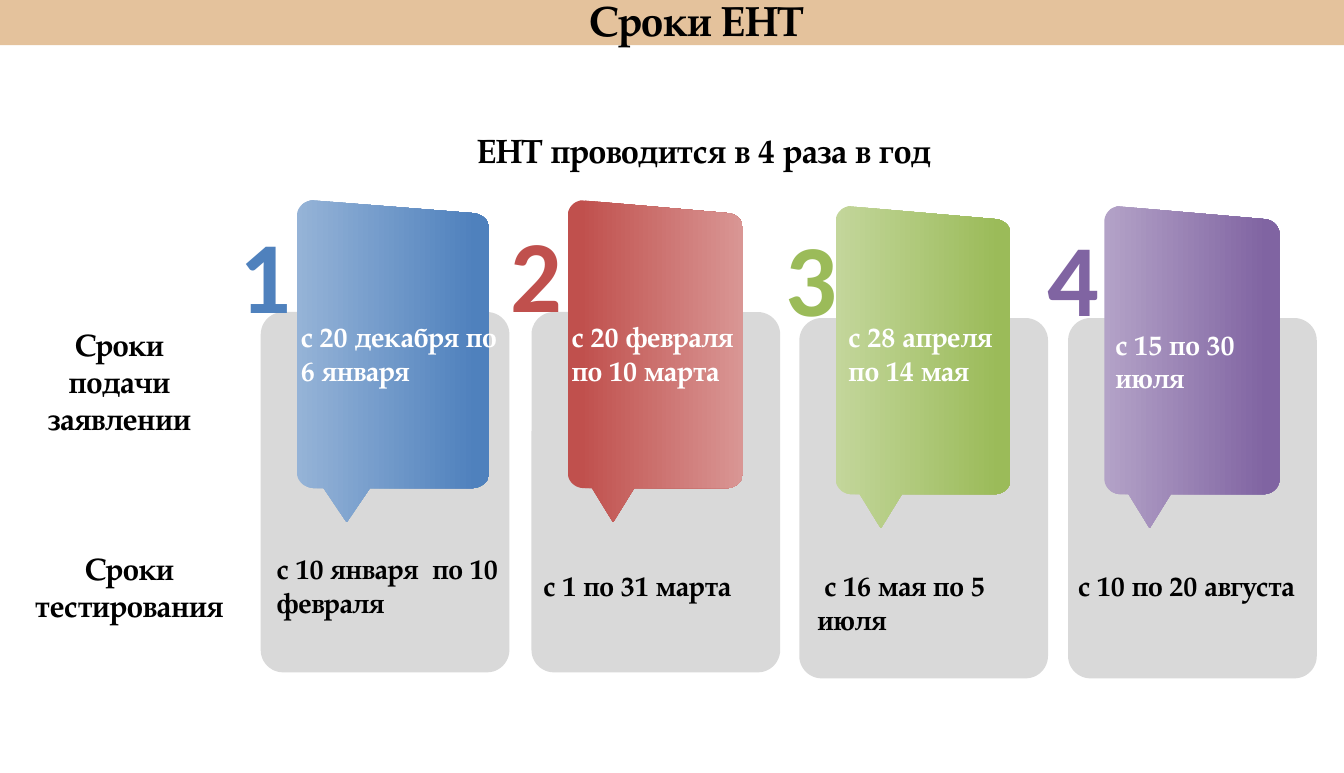
import pptx
import pptx.dml.color
import pptx.enum.shapes
import pptx.enum.text
import pptx.util

Inches = pptx.util.Inches
LEFT = pptx.enum.text.PP_ALIGN.LEFT
CENTER = pptx.enum.text.PP_ALIGN.CENTER
SHAPES = pptx.enum.shapes.MSO_SHAPE

PANEL_WIDTH = 1.74
PANEL_OUTLINE = [
    [(0.13, 0)], [(1.62, 0.13)], [(1.64, 0.14)],
    [(1.70, 0.16), (1.74, 0.22), (1.74, 0.28)],
    [(1.74, 2.71)],
    [(1.74, 2.79), (1.67, 2.86), (1.58, 2.86)],
    [(0.66, 2.86)], [(0.45, 3.2)], [(0.24, 2.86)], [(0.16, 2.86)],
    [(0.07, 2.86), (0, 2.79), (0, 2.71)],
    [(0, 0.15)],
    [(0, 0.09), (0.04, 0.03), (0.10, 0.01)],
]


def rgb(value):
    return pptx.dml.color.RGBColor.from_string(value)


def curve(start, first, second, end, steps=10):
    for step in range(1, steps + 1):
        t = step / steps
        yield tuple(
            (1 - t) ** 3 * a + 3 * (1 - t) ** 2 * t * b + 3 * (1 - t) * t ** 2 * c + t ** 3 * d
            for a, b, c, d in zip(start, first, second, end)
        )


def panel_points():
    points = []
    for segment in PANEL_OUTLINE:
        points.extend(segment if len(segment) == 1 else curve(points[-1], *segment))
    return points


class Slide:
    serif = "TeX Gyre Pagella"
    digit_font = "Calibri"
    black = "000000"
    white = "FFFFFF"
    card_gray = "D9D9D9"
    band_tan = "E4C29C"

    def __init__(self, deck):
        self.slide = deck.slides.add_slide(deck.slide_layouts[5])
        self.shapes = self.slide.shapes

    def fill_text(self, frame, text, size, color, font, align, wrap):
        frame.word_wrap = wrap
        frame.auto_size = pptx.enum.text.MSO_AUTO_SIZE.NONE
        frame.vertical_anchor = pptx.enum.text.MSO_ANCHOR.TOP
        for index, line in enumerate(text.split("\n")):
            paragraph = frame.add_paragraph() if index else frame.paragraphs[0]
            paragraph.alignment = align
            run = paragraph.add_run()
            run.text = line
            run.font.name = font
            run.font.size = pptx.util.Pt(size)
            run.font.bold = True
            run.font.color.rgb = rgb(color)

    def text(self, box, text, size=20, color=black, font=serif, align=LEFT, wrap=True):
        label = self.shapes.add_textbox(*map(Inches, box))
        self.fill_text(label.text_frame, text, size, color, font, align, wrap)

    def title(self, box, text):
        heading = self.shapes.title
        heading.left, heading.top, heading.width, heading.height = map(Inches, box)
        self.fill_text(heading.text_frame, text, 30, self.black, self.serif, LEFT, False)
        self.shapes._spTree.append(heading._element)

    def block(self, kind, box, color):
        block = self.shapes.add_shape(kind, *map(Inches, box))
        block.shadow.inherit = False
        block.fill.solid()
        block.fill.fore_color.rgb = rgb(color)
        block.line.fill.background()
        return block

    def card(self, left, top):
        card = self.block(SHAPES.ROUNDED_RECTANGLE, (left, top, 2.47, 3.58), self.card_gray)
        card.adjustments[0] = 0.09

    def panel(self, left, top, width, stops):
        stretch = width / PANEL_WIDTH
        points = [(Inches(left + x * stretch), Inches(top + y)) for x, y in panel_points()]
        builder = self.shapes.build_freeform(*points[0], scale=1.0)
        builder.add_line_segments(points[1:], close=True)
        panel = builder.convert_to_shape()
        panel.shadow.inherit = False
        panel.line.fill.background()
        panel.fill.gradient()
        panel.fill.gradient_angle = 0
        for stop, (position, color) in zip(panel.fill.gradient_stops, stops):
            stop.position = position
            stop.color.rgb = rgb(color)


def main():
    deck = pptx.Presentation()
    deck.slide_width, deck.slide_height = Inches(13.35), Inches(7.68)
    schedule = Slide(deck)

    rounds = [
        (2.59, 3.1, 1.91, "4F81BD", [(0, "95B3D7"), (0.93, "4F81BD")], (2.28, 2.05),
         (2.89, 3.13, 2.16, 0.78), "с 20 декабря по 6 января",
         (2.65, 5.43, 2.41, 0.78), "с 10 января  по 10 февраля"),
        (5.28, 3.1, 1.74, "C0504D", [(0.07, "C0504D"), (1, "D99694")], (4.97, 2.04),
         (5.58, 3.13, 1.94, 0.78), "с 20 февраля\nпо 10 марта",
         (5.3, 5.6, 2.38, 0.44), "с 1 по 31 марта"),
        (7.94, 3.16, 1.74, "9BBB59", [(0, "C3D69B"), (0.93, "9BBB59")], (7.7, 2.08),
         (8.33, 3.13, 1.74, 0.78), "с 28 апреля по 14 мая",
         (8.02, 5.6, 2.36, 0.78), " с 16 мая по 5 июля"),
        (10.61, 3.16, 1.74, "8064A2", [(0, "B3A2C7"), (0.93, "8064A2")], (10.31, 2.08),
         (10.98, 3.2, 1.74, 0.78), "с 15 по 30 июля",
         (10.61, 5.6, 2.56, 0.44), "с 10 по 20 августа"),
    ]
    for number, (left, top, width, accent, stops, digit_at,
                 apply_box, apply_dates, test_box, test_dates) in enumerate(rounds, 1):
        schedule.card(left, top)
        schedule.panel(left + 0.36, top - 1.11, width, stops)
        schedule.text(apply_box, apply_dates, color=Slide.white)
        schedule.text(test_box, test_dates)
        schedule.text((*digit_at, 0.72, 1.33), str(number), 73, accent,
                      Slide.digit_font, wrap=False)

    schedule.text((0.26, 3.19, 1.85, 1.21), "Сроки подачи заявлении", 22, align=CENTER)
    schedule.text((0.06, 5.41, 2.45, 0.84), "Сроки тестирования", 22, align=CENTER)
    schedule.block(SHAPES.RECTANGLE, (-0.02, -0.02, 13.39, 0.47), Slide.band_tan)
    schedule.title((5.76, -0.1, 2.55, 0.61), "Сроки ЕНТ")
    schedule.text((4.39, 1.24, 5.29, 0.5), "ЕНТ проводится в 4 раза в год ", 24,
                  align=CENTER, wrap=False)
    deck.save("out.pptx")


if __name__ == "__main__":
    main()
